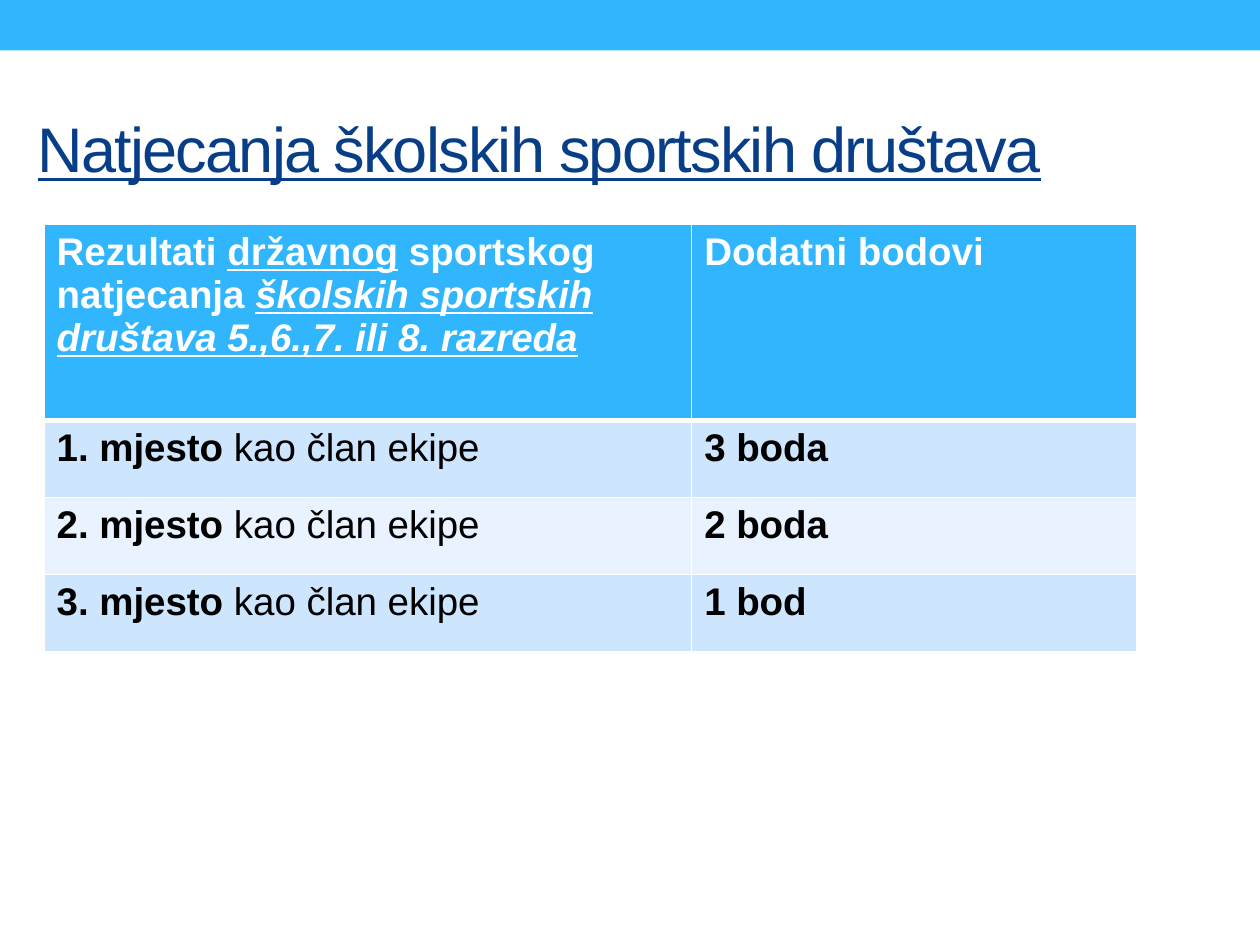
from lxml import etree
from pptx import Presentation
from pptx.dml.color import RGBColor
from pptx.enum.shapes import MSO_SHAPE
from pptx.enum.text import MSO_ANCHOR
from pptx.oxml.ns import qn
from pptx.util import Inches, Pt

RECT = MSO_SHAPE.RECTANGLE
MIDDLE = MSO_ANCHOR.MIDDLE
COLORS = {
    "accent": "31B6FD",
    "title": "073E87",
    "band_dark": "CEE5FE",
    "band_light": "E8F3FF",
    "white": "FFFFFF",
    "black": "000000",
}


def rgb(name):
    return RGBColor.from_string(COLORS[name])


def add_border(cell, side, width):
    ln = etree.SubElement(cell._tc.get_or_add_tcPr(), qn(f"a:ln{side}"), w=str(Pt(width)))
    fill = etree.SubElement(ln, qn("a:solidFill"))
    etree.SubElement(fill, qn("a:srgbClr"), val=COLORS["white"])


prs = Presentation()
prs.slide_width = Inches(10)
prs.slide_height = Inches(7.5)
s = prs.slides.add_slide(prs.slide_layouts[6])

bar = s.shapes.add_shape(RECT, 0, 0, prs.slide_width, Inches(0.4))
bar.shadow.inherit = False
bar.fill.solid()
bar.fill.fore_color.rgb = rgb("accent")
bar.line.fill.background()

title = s.shapes.add_textbox(Inches(0.2), Inches(0.52), Inches(9.53), Inches(1.81))
tf = title.text_frame
tf.word_wrap = True
tf.vertical_anchor = MIDDLE
tf.margin_bottom = Inches(0.56)
p = tf.paragraphs[0]
p.font.name = "Arial"
p.font.size = Pt(36)
p.font.underline = True
p.font.color.rgb = rgb("title")
r = p.add_run()
r.text = "Natjecanja školskih sportskih društava"
r.font._element.set("spc", "-100")

ROWS = [
    (
        [
            ("Rezultati ", "b"),
            ("državnog", "bu"),
            (" sportskog natjecanja ", "b"),
            ("školskih sportskih društava 5.,6.,7. ili 8. razreda", "biu"),
        ],
        [("Dodatni bodovi", "b")],
    ),
]
for place, points in enumerate(["3 boda", "2 boda", "1 bod"], 1):
    ROWS.append(([(f"{place}. mjesto", "b"), (" kao član ekipe", "")], [(points, "b")]))

WIDTHS = [5.14, 3.53]
HEIGHTS = [1.56, 0.61, 0.61, 0.61]
frame = s.shapes.add_table(
    len(ROWS), len(WIDTHS), Inches(0.35), Inches(1.78), Inches(sum(WIDTHS)), Inches(sum(HEIGHTS))
)
table = frame.table
for column, width in zip(table.columns, WIDTHS):
    column.width = Inches(width)

for i, (row, height) in enumerate(zip(ROWS, HEIGHTS)):
    table.rows[i].height = Inches(height)
    fill = "accent" if i == 0 else ("band_dark" if i % 2 else "band_light")
    for j, runs in enumerate(row):
        cell = table.cell(i, j)
        for side in "LRTB":
            heavy = (i, side) in [(0, "B"), (1, "T")]
            add_border(cell, side, 3 if heavy else 1)
        cell.fill.solid()
        cell.fill.fore_color.rgb = rgb(fill)
        p = cell.text_frame.paragraphs[0]
        p.font.name = "Arial"
        p.font.size = Pt(22)
        p.font.color.rgb = rgb("black" if i else "white")
        for text, style in runs:
            r = p.add_run()
            r.text = text
            r.font.bold = "b" in style
            r.font.italic = "i" in style
            r.font.underline = "u" in style

prs.save("out.pptx")
